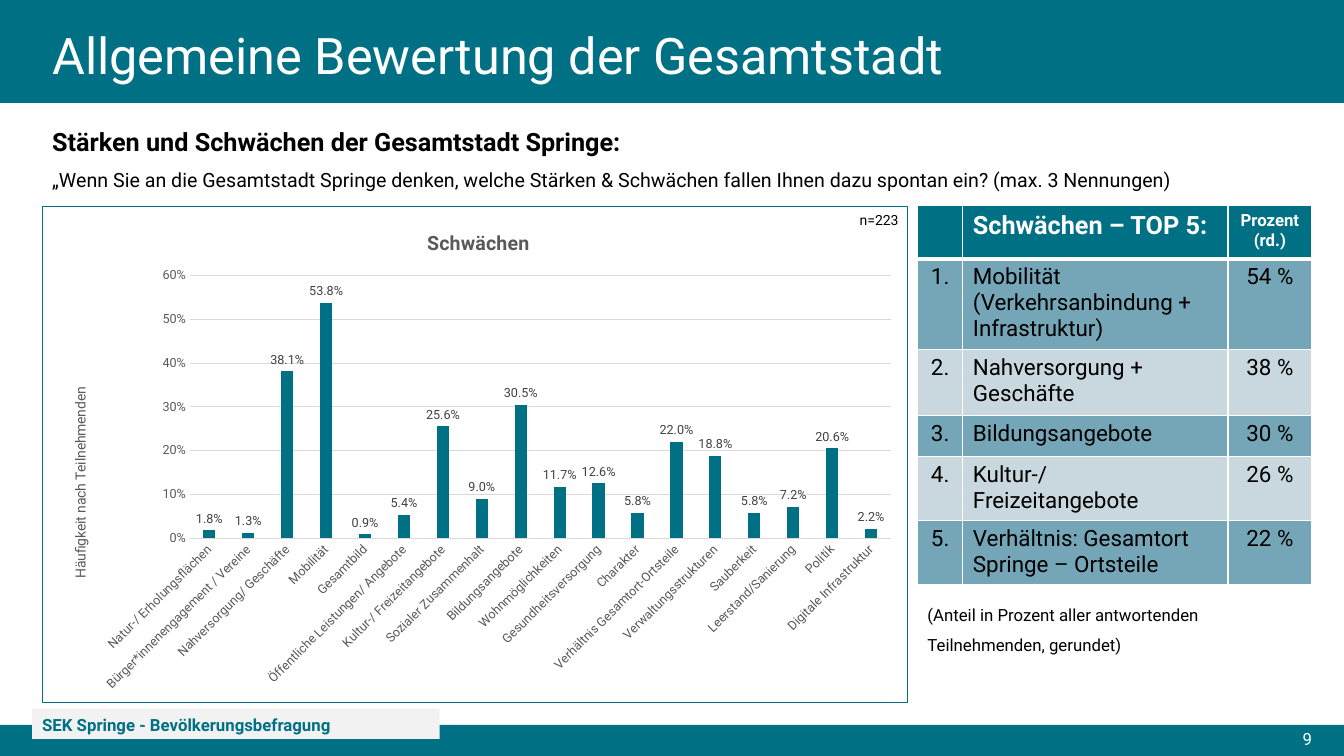
from dataclasses import dataclass

from lxml.etree import SubElement
from pptx import Presentation
from pptx.chart.data import CategoryChartData
from pptx.dml.color import RGBColor
from pptx.enum.chart import XL_CHART_TYPE, XL_LABEL_POSITION, XL_TICK_MARK
from pptx.enum.shapes import MSO_SHAPE
from pptx.enum.text import MSO_ANCHOR, PP_ALIGN
from pptx.oxml import parse_xml
from pptx.oxml.ns import nsdecls, qn
from pptx.util import Emu, Pt


@dataclass(frozen=True)
class Theme:
    font: str = "Roboto"
    teal: str = "007085"
    white: str = "FFFFFF"
    black: str = "000000"
    pale: str = "F2F2F2"
    grid: str = "D9D9D9"
    axis: str = "595959"
    value: str = "404040"
    stripes: tuple = ("74A6B7", "C8D8DE")
    headline: int = 36
    heading: int = 18
    cell: int = 16
    body: int = 14
    small: int = 12
    note: int = 10
    tick: int = 9


@dataclass(frozen=True)
class Box:
    left: int
    top: int
    width: int
    height: int

    def emu(self) -> tuple:
        return tuple(px(side) for side in (self.left, self.top, self.width, self.height))


@dataclass(frozen=True)
class Band:
    box: Box
    color: str


@dataclass(frozen=True)
class Weakness:
    name: str
    percent: str
    height: int


THEME = Theme()
EMU_PER_PX = 9144  # 100 px to the inch
SLIDE = Box(0, 0, 1333, 750)
CHART = Box(42, 204, 859, 493)

BANDS = [
    Band(Box(0, 0, SLIDE.width, 102), THEME.teal),
    Band(Box(0, 719, SLIDE.width, 31), THEME.teal),
    Band(Box(32, 703, 404, 30), THEME.pale),
]

MENTIONS = {
    "Natur-/ Erholungsflächen": 0.018,
    "Bürger*innenengagement / Vereine": 0.013,
    "Nahversorgung/ Geschäfte": 0.381,
    "Mobilität": 0.538,
    "Gesamtbild": 0.009,
    "Öffentliche Leistungen/ Angebote": 0.054,
    "Kultur-/ Freizeitangebote": 0.256,
    "Sozialer Zusammenhalt": 0.09,
    "Bildungsangebote": 0.305,
    "Wohnmöglichkeiten": 0.117,
    "Gesundheitsversorgung": 0.126,
    "Charakter": 0.058,
    "Verhältnis Gesamtort-Ortsteile": 0.22,
    "Verwaltungsstrukturen": 0.188,
    "Sauberkeit": 0.058,
    "Leerstand/Sanierung": 0.072,
    "Politik": 0.206,
    "Digitale Infrastruktur": 0.022,
}

TOP_FIVE = [
    Weakness("Mobilität (Verkehrsanbindung + Infrastruktur)", "54 %", 88),
    Weakness("Nahversorgung + Geschäfte", "38 %", 65),
    Weakness("Bildungsangebote", "30 %", 41),
    Weakness("Kultur-/ Freizeitangebote", "26 %", 63),
    Weakness("Verhältnis: Gesamtort Springe – Ortsteile", "22 %", 63),
]


def px(length: int) -> Emu:
    return Emu(length * EMU_PER_PX)


def style_font(font, size: int, color: str, bold: bool = False) -> None:
    font.name, font.size, font.bold = THEME.font, Pt(size), bold
    font.color.rgb = RGBColor.from_string(color)


def write(frame, text: str, *, size: int, color: str = THEME.black, bold: bool = False,
          align=PP_ALIGN.LEFT, spacing: float = 1.0, anchor=MSO_ANCHOR.TOP,
          append: bool = False) -> None:
    frame.word_wrap, frame.vertical_anchor = True, anchor
    para = frame.add_paragraph() if append else frame.paragraphs[0]
    para.alignment, para.line_spacing = align, spacing
    span = para.add_run()
    span.text = text
    style_font(span.font, size, color, bold)


def add_text(page, box: Box, text: str, **style):
    frame = page.shapes.add_textbox(*box.emu()).text_frame
    write(frame, text, **style)
    return frame


def add_band(page, band: Band):
    shape = page.shapes.add_shape(MSO_SHAPE.RECTANGLE, *band.box.emu())
    shape.shadow.inherit = False
    shape.fill.solid()
    shape.fill.fore_color.rgb = RGBColor.from_string(band.color)
    shape.line.fill.background()
    return shape


def place(element, index: int, inner: bool = False, **fractions: float) -> None:
    """Give a chart part a manual layout in fractions of the chart."""
    for old in element.findall(qn("c:layout")):
        element.remove(old)
    layout = parse_xml(f"<c:layout {nsdecls('c')}><c:manualLayout/></c:layout>")
    manual = layout[0]
    if inner:
        SubElement(manual, qn("c:layoutTarget")).set("val", "inner")
    for side in ("x", "y"):
        SubElement(manual, qn(f"c:{side}Mode")).set("val", "edge")
    for side, fraction in fractions.items():
        SubElement(manual, qn(f"c:{side}")).set("val", str(fraction))
    element.insert(index, layout)


def add_weakness_chart(page) -> None:
    data = CategoryChartData()
    data.categories = list(MENTIONS)
    data.add_series("Schwächen", list(MENTIONS.values()))
    chart = page.shapes.add_chart(XL_CHART_TYPE.COLUMN_CLUSTERED, *CHART.emu(), data).chart
    style_font(chart.font, THEME.note, THEME.black)
    chart.has_legend = False
    space = chart._chartSpace
    space.find(qn("c:chart")).addnext(parse_xml(
        f'<c:spPr {nsdecls("c", "a")}><a:solidFill><a:srgbClr val="{THEME.white}"/></a:solidFill>'
        f'<a:ln w="{Pt(0.75)}"><a:solidFill><a:srgbClr val="{THEME.teal}"/></a:solidFill></a:ln></c:spPr>'))

    # Columns and their values
    plot = chart.plots[0]
    plot.gap_width, plot.overlap, plot.vary_by_categories = 219, -27, False
    columns = plot.series[0]
    columns.format.fill.solid()
    columns.format.fill.fore_color.rgb = RGBColor.from_string(THEME.teal)
    plot.has_data_labels = True
    labels = plot.data_labels
    labels.show_value, labels.position = True, XL_LABEL_POSITION.OUTSIDE_END
    labels.number_format, labels.number_format_is_linked = "0.0%", False
    style_font(labels.font, THEME.tick, THEME.value)

    # Axes
    names, scale = chart.category_axis, chart.value_axis
    for axis in (names, scale):
        axis.major_tick_mark = axis.minor_tick_mark = XL_TICK_MARK.NONE
        style_font(axis.tick_labels.font, THEME.tick, THEME.axis)
    names._element.find(qn("c:txPr")).find(qn("a:bodyPr")).set("rot", "-2700000")
    scale.minimum_scale, scale.maximum_scale, scale.major_unit = 0, 0.6, 0.1
    scale.tick_labels.number_format, scale.tick_labels.number_format_is_linked = "0%", False
    scale.format.line.fill.background()
    for line in (names.format.line, scale.major_gridlines.format.line):
        line.color.rgb, line.width = RGBColor.from_string(THEME.grid), Pt(0.75)

    # Titles and plot position
    write(chart.chart_title.text_frame, "Schwächen", size=THEME.body, color=THEME.axis, bold=True)
    scale_title = scale.axis_title
    write(scale_title.text_frame, "Häufigkeit nach Teilnehmenden", size=THEME.note, color=THEME.axis)
    scale_title._element.find(f".//{qn('a:bodyPr')}").set("rot", "-5400000")
    place(chart.chart_title._element, 1, x=0.44, y=0.04)
    place(scale_title._element, 1, x=0.03, y=0.36)
    place(space.find(f".//{qn('c:plotArea')}"), 0, inner=True, x=0.17, y=0.14, w=0.81, h=0.53)


def fill_cell(cell, color: str, top: int, bottom: int) -> None:
    cell.fill.solid()
    cell.fill.fore_color.rgb = RGBColor.from_string(color)
    for index, (side, width) in enumerate((("L", 1), ("R", 1), ("T", top), ("B", bottom))):
        cell._tc.tcPr.insert(index, parse_xml(
            f'<a:ln{side} {nsdecls("a")} w="{Pt(width)}"><a:solidFill>'
            f'<a:srgbClr val="{THEME.white}"/></a:solidFill></a:ln{side}>'))


def add_top_five(page) -> None:
    rows = [("", "Schwächen – TOP 5:", "Prozent (rd.)")]
    rows += [(f"{rank}.", item.name, item.percent) for rank, item in enumerate(TOP_FIVE, 1)]
    heights = [53] + [item.height for item in TOP_FIVE]
    widths = (45, 263, 83)
    box = Box(910, 204, sum(widths), sum(heights))
    table = page.shapes.add_table(len(rows), len(widths), *box.emu()).table
    for column, width in zip(table.columns, widths):
        column.width = px(width)
    for row, (texts, height) in enumerate(zip(rows, heights)):
        table.rows[row].height = px(height)
        header = row == 0
        color = THEME.teal if header else THEME.stripes[(row - 1) % 2]
        for column, text in enumerate(texts):
            cell = table.cell(row, column)
            fill_cell(cell, color, 3 if row == 1 else 1, 3 if header else 1)
            header_size = THEME.heading if column == 1 else THEME.small
            if text:
                write(cell.text_frame, text, size=header_size if header else THEME.cell,
                      color=THEME.white if header else THEME.black, bold=header,
                      align=PP_ALIGN.LEFT if column == 1 else PP_ALIGN.CENTER)


def main() -> None:
    deck = Presentation()
    deck.slide_width, deck.slide_height = px(SLIDE.width), px(SLIDE.height)
    page = deck.slides.add_slide(deck.slide_layouts[6])

    # Header and footer
    *_, label = [add_band(page, band) for band in BANDS]
    write(label.text_frame, "SEK Springe - Bevölkerungsbefragung", size=THEME.small,
          color=THEME.teal, bold=True, spacing=1.07, anchor=MSO_ANCHOR.MIDDLE)
    add_text(page, Box(872, 718, 439, 30), "9", size=THEME.small, color=THEME.white,
             align=PP_ALIGN.RIGHT, anchor=MSO_ANCHOR.MIDDLE)
    add_text(page, Box(42, 21, 1150, 73), "Allgemeine Bewertung der Gesamtstadt",
             size=THEME.headline, color=THEME.white, spacing=0.9, anchor=MSO_ANCHOR.MIDDLE)

    # Question
    question = add_text(page, Box(42, 105, 1244, 86), "Stärken und Schwächen der Gesamtstadt Springe:",
                        size=THEME.heading, bold=True, spacing=1.5)
    write(question, "„Wenn Sie an die Gesamtstadt Springe denken, welche Stärken & Schwächen "
          "fallen Ihnen dazu spontan ein? (max. 3 Nennungen)", size=THEME.body, spacing=1.5, append=True)

    # Results
    add_weakness_chart(page)
    add_text(page, Box(836, 205, 65, 27), "n=223", size=THEME.note, align=PP_ALIGN.RIGHT)
    add_top_five(page)
    add_text(page, Box(910, 585, 391, 67), "(Anteil in Prozent aller antwortenden Teilnehmenden, gerundet)",
             size=THEME.small, spacing=1.5)
    deck.save("out.pptx")


if __name__ == "__main__":
    main()
